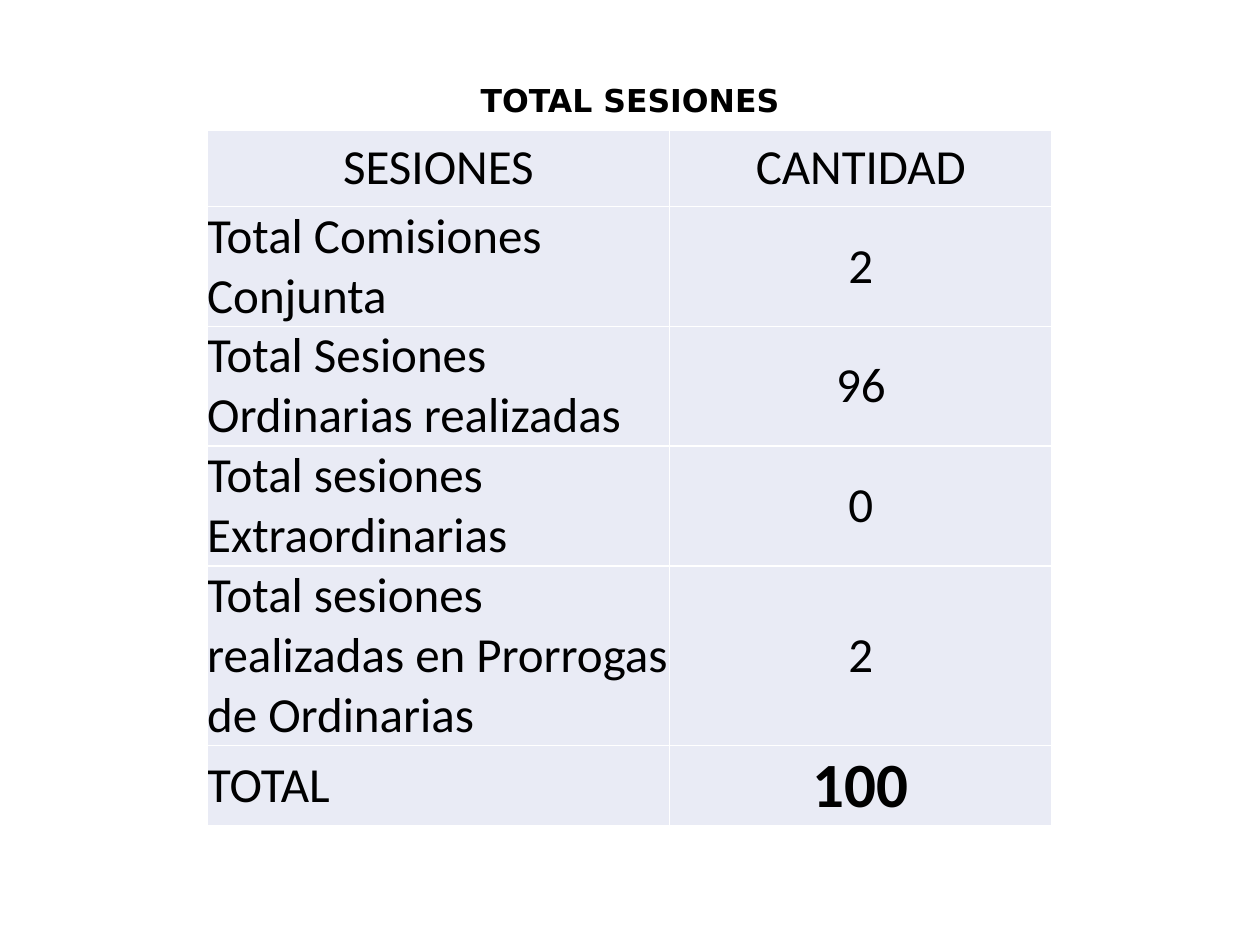
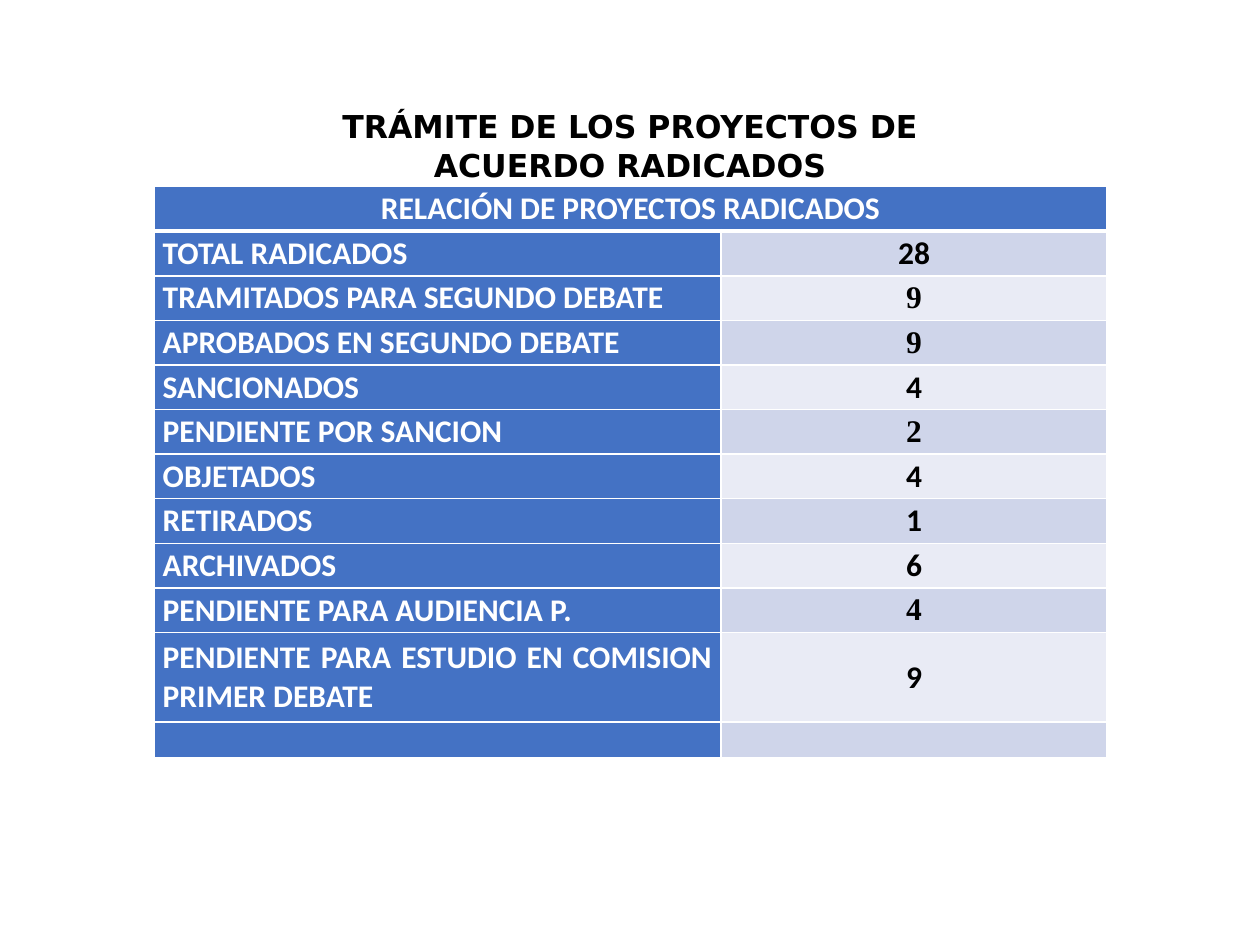
from lxml.etree import SubElement
from pptx import Presentation
from pptx.dml.color import RGBColor
from pptx.enum.text import MSO_ANCHOR as Anchor, MSO_AUTO_SIZE as AutoSize, PP_ALIGN as Align
from pptx.oxml.ns import qn
from pptx.util import Pt

BLACK = RGBColor(0x00, 0x00, 0x00)
WHITE = RGBColor(0xFF, 0xFF, 0xFF)
BLUE = RGBColor(0x44, 0x72, 0xC4)
BAND_DARK = RGBColor(0xCF, 0xD5, 0xEA)
BAND_LIGHT = RGBColor(0xE9, 0xEB, 0xF5)

TITLE_FONT, TABLE_FONT, SERIF_FONT = "DejaVu Sans", "Calibri", "Times New Roman"
TITLE_ONLY = 5
EMPTY_SIZE = 11

SESSIONS = [
    ("SESIONES", "CANTIDAD"),
    ("Total Comisiones Conjunta", "2"),
    ("Total Sesiones Ordinarias realizadas", "96"),
    ("Total sesiones Extraordinarias", "0"),
    ("Total sesiones realizadas en Prorrogas de Ordinarias", "2"),
    ("TOTAL", "100"),
]
SESSION_HEIGHTS = [43.7, 64.8, 64.8, 64.8, 97.2, 46.1]

PROJECTS = [
    ("TOTAL RADICADOS", "28", TABLE_FONT),
    ("TRAMITADOS PARA SEGUNDO DEBATE", "9", SERIF_FONT),
    ("APROBADOS EN SEGUNDO DEBATE", "9", SERIF_FONT),
    ("SANCIONADOS", "4", TABLE_FONT),
    ("PENDIENTE POR SANCION", "2", SERIF_FONT),
    ("OBJETADOS", "4", TABLE_FONT),
    ("RETIRADOS", "1", TABLE_FONT),
    ("ARCHIVADOS", "6", TABLE_FONT),
    ("PENDIENTE PARA AUDIENCIA P.", "4", SERIF_FONT),
    ("PENDIENTE PARA ESTUDIO EN COMISION PRIMER DEBATE", "9", TABLE_FONT),
    ("", "", TABLE_FONT),
]
PROJECT_HEIGHTS = [25.5] * 10 + [51.1, 20.6]


def set_all(target, values):
    for name, value in values.items():
        setattr(target, name, value)


def write(para, text, align, size, color, font=TABLE_FONT, bold=False):
    para.alignment = align
    span = para.add_run()
    span.text = text
    set_all(span.font, {"name": font, "size": Pt(size), "bold": bold})
    span.font.color.rgb = color


def add_title_page(deck, title, left, top, width, height):
    page = deck.slides.add_slide(deck.slide_layouts[TITLE_ONLY])
    box = page.shapes.title
    set_all(box, {"left": Pt(left), "top": Pt(top), "width": Pt(width), "height": Pt(height)})
    frame = box.text_frame
    set_all(frame, {"word_wrap": True, "auto_size": AutoSize.NONE, "vertical_anchor": Anchor.TOP})
    para = frame.paragraphs[0]
    para.line_spacing = 1.05
    write(para, title, Align.CENTER, 18, BLACK, TITLE_FONT, True)
    return page


def add_grid(page, left, top, widths, heights):
    frame = page.shapes.add_table(len(heights), len(widths), Pt(left), Pt(top),
                                  Pt(sum(widths)), Pt(sum(heights)))
    table = frame.table
    for column, width in zip(table.columns, widths):
        column.width = Pt(width)
    for row, height in zip(table.rows, heights):
        row.height = Pt(height)
    return table


def add_borders(cell, top=1, bottom=1):
    properties = cell._tc.get_or_add_tcPr()
    for side, width in {"L": 1, "R": 1, "T": top, "B": bottom}.items():
        line = SubElement(properties, qn(f"a:ln{side}"), w=str(Pt(width)))
        fill = SubElement(line, qn("a:solidFill"))
        SubElement(fill, qn("a:srgbClr"), val=str(WHITE))


def style_cell(cell, fill, side_margin=0, top=1, bottom=1):
    add_borders(cell, top, bottom)
    cell.fill.solid()
    cell.fill.fore_color.rgb = fill
    set_all(cell, {"vertical_anchor": Anchor.MIDDLE, "margin_top": 0, "margin_bottom": 0,
                   "margin_left": Pt(side_margin), "margin_right": Pt(side_margin)})


def shrink_empty(para):
    """Keep an empty cell from growing its row."""
    SubElement(para._p, qn("a:endParaRPr"), sz=str(EMPTY_SIZE * 100))


def add_sessions_table(page):
    table = add_grid(page, 118.4, 74.3, [264.2, 218.6], SESSION_HEIGHTS)
    last_row = len(SESSIONS) - 1
    for row, texts in enumerate(SESSIONS):
        for column, text in enumerate(texts):
            cell = table.cell(row, column)
            style_cell(cell, BAND_LIGHT)
            is_label = row > 0 and column == 0
            is_sum = row == last_row and column == 1
            write(cell.text_frame.paragraphs[0], text,
                  Align.LEFT if is_label else Align.CENTER,
                  36 if is_sum else 28, BLACK, bold=is_sum)


def add_projects_table(page):
    table = add_grid(page, 88, 106.6, [324, 220.7], PROJECT_HEIGHTS)
    for column in range(2):
        style_cell(table.cell(0, column), BLUE, 5, bottom=3)
    header = table.cell(0, 0)
    header.merge(table.cell(0, 1))
    write(header.text_frame.paragraphs[0], "RELACIÓN DE PROYECTOS RADICADOS",
          Align.CENTER, 18, WHITE, bold=True)

    for row, (label, count, count_font) in enumerate(PROJECTS, start=1):
        band = BAND_DARK if row % 2 else BAND_LIGHT
        formats = [(label, BLUE, Align.JUSTIFY, WHITE, TABLE_FONT),
                   (count, band, Align.CENTER, BLACK, count_font)]
        for column, (text, fill, align, color, font) in enumerate(formats):
            cell = table.cell(row, column)
            style_cell(cell, fill, 5, top=3 if row == 1 else 1)
            para = cell.text_frame.paragraphs[0]
            if text:
                write(para, text, align, 18, color, font, True)
            else:
                shrink_empty(para)


def main():
    deck = Presentation()
    set_all(deck, {"slide_width": Pt(720), "slide_height": Pt(540)})
    add_sessions_table(add_title_page(deck, "TOTAL SESIONES", 264.6, 41.8, 190.8, 28.8))
    add_projects_table(add_title_page(
        deck, "TRÁMITE DE LOS PROYECTOS DE ACUERDO RADICADOS", 180, 56.2, 360, 51.1))
    deck.save("out.pptx")


if __name__ == "__main__":
    main()
